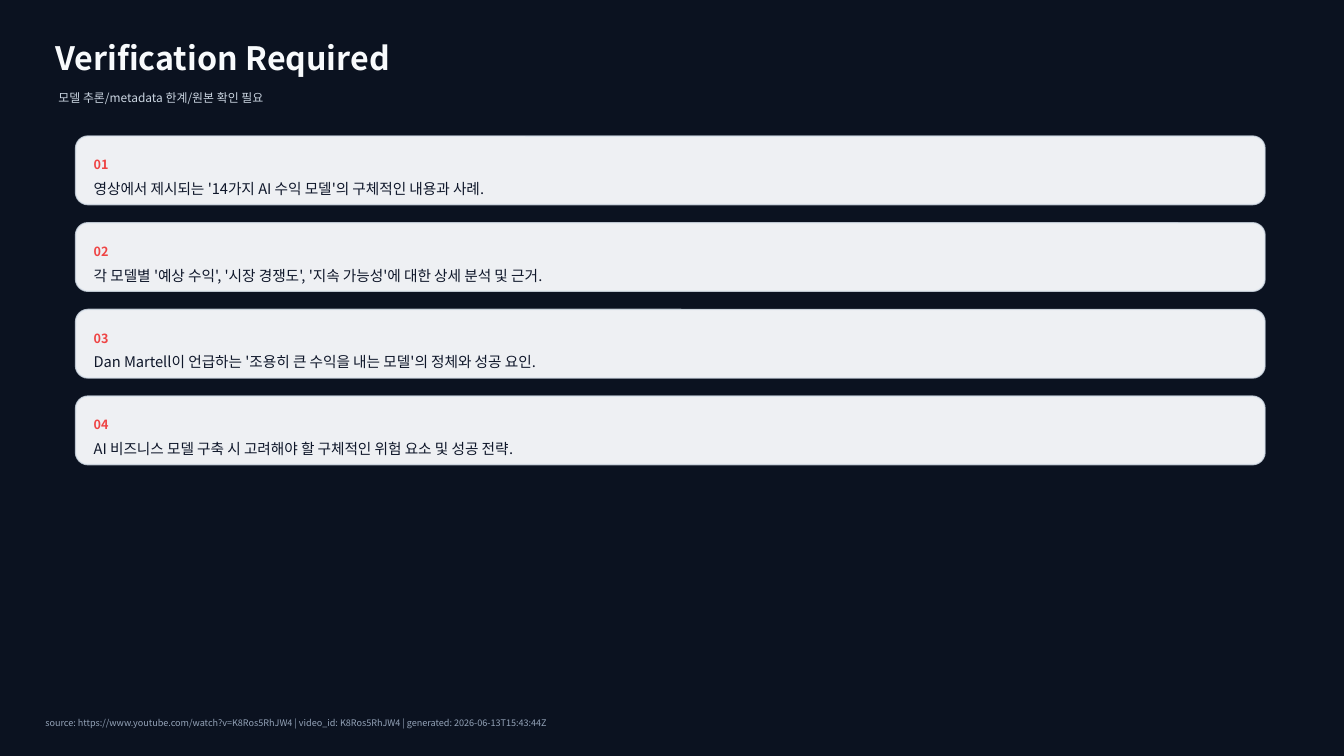
from lxml.etree import SubElement
from pptx import Presentation
from pptx.dml.color import RGBColor
from pptx.enum.shapes import MSO_SHAPE
from pptx.enum.text import MSO_ANCHOR
from pptx.oxml.ns import qn
from pptx.util import Pt

FONT = "Noto Sans CJK KR"
COLORS = {
    "background": "0B1220",
    "title": "F8FAFC",
    "subtitle": "CBD5E1",
    "card": "F8FAFC",
    "border": "D7E0EA",
    "number": "EF4444",
    "body": "0F172A",
    "source": "94A3B8",
}
FORMATS = {
    "title": {"size": Pt(23), "bold": True},
    "subtitle": {"size": Pt(8.5)},
    "number": {"size": Pt(9), "bold": True},
    "body": {"size": Pt(10.5)},
    "source": {"size": Pt(6.5)},
}
CHECKS = [
    "영상에서 제시되는 '14가지 AI 수익 모델'의 구체적인 내용과 사례.",
    "각 모델별 '예상 수익', '시장 경쟁도', '지속 가능성'에 대한 상세 분석 및 근거.",
    "Dan Martell이 언급하는 '조용히 큰 수익을 내는 모델'의 정체와 성공 요인.",
    "AI 비즈니스 모델 구축 시 고려해야 할 구체적인 위험 요소 및 성공 전략.",
]
CARD_LEFT, CARD_TOP, CARD_WIDTH, CARD_HEIGHT = 54, 97.2, 849.6, 48.96
CARD_PITCH = 61.92
CARD_PADDING = 12.96


def paint(fill, color, opacity=100):
    fill.solid()
    fill.fore_color.rgb = RGBColor.from_string(COLORS[color])
    if opacity < 100:
        color_element = fill._xPr.find(qn("a:solidFill"))[0]
        SubElement(color_element, qn("a:alpha"), val=str(opacity * 1000))


def add_text(slide, text, style, left, top, width, height):
    box = slide.shapes.add_textbox(Pt(left), Pt(top), Pt(width), Pt(height))
    frame = box.text_frame
    frame_format = {
        "word_wrap": True,
        "vertical_anchor": MSO_ANCHOR.MIDDLE,
        "margin_left": 0,
        "margin_top": 0,
        "margin_right": 0,
        "margin_bottom": 0,
    }
    for name, value in frame_format.items():
        setattr(frame, name, value)
    run = frame.paragraphs[0].add_run()
    run.text = text
    for name, value in {"name": FONT, **FORMATS[style]}.items():
        setattr(run.font, name, value)
    run.font.color.rgb = RGBColor.from_string(COLORS[style])
    SubElement(run.font._element, qn("a:ea"), typeface=FONT)


def add_card(slide, index, text):
    top = CARD_TOP + index * CARD_PITCH
    card = slide.shapes.add_shape(
        MSO_SHAPE.ROUNDED_RECTANGLE,
        Pt(CARD_LEFT), Pt(top), Pt(CARD_WIDTH), Pt(CARD_HEIGHT),
    )
    card.adjustments[0] = 0.18
    card.shadow.inherit = False
    card.line.width = Pt(1)
    paint(card.fill, "card", 96)
    paint(card.line.fill, "border", 80)
    left = CARD_LEFT + CARD_PADDING
    width = CARD_WIDTH - 2 * CARD_PADDING
    add_text(slide, f"{index + 1:02}", "number", left, top + 11.52, width, 18)
    add_text(slide, text, "body", left, top + 36, width, 2.88)


def main():
    presentation = Presentation()
    presentation.slide_width = Pt(960)
    presentation.slide_height = Pt(540)
    slide = presentation.slides.add_slide(presentation.slide_layouts[6])
    paint(slide.background.fill, "background")
    add_text(slide, "Verification Required", "title", 39.6, 25.2, 864, 32.4)
    add_text(slide, "모델 추론/metadata 한계/원본 확인 필요", "subtitle",
             41.76, 59.76, 828, 20.16)
    for index, text in enumerate(CHECKS):
        add_card(slide, index, text)
    add_text(
        slide,
        "source: https://www.youtube.com/watch?v=K8Ros5RhJW4"
        " | video_id: K8Ros5RhJW4 | generated: 2026-06-13T15:43:44Z",
        "source", 32.4, 507.6, 892.8, 18,
    )
    presentation.save("out.pptx")


if __name__ == "__main__":
    main()
